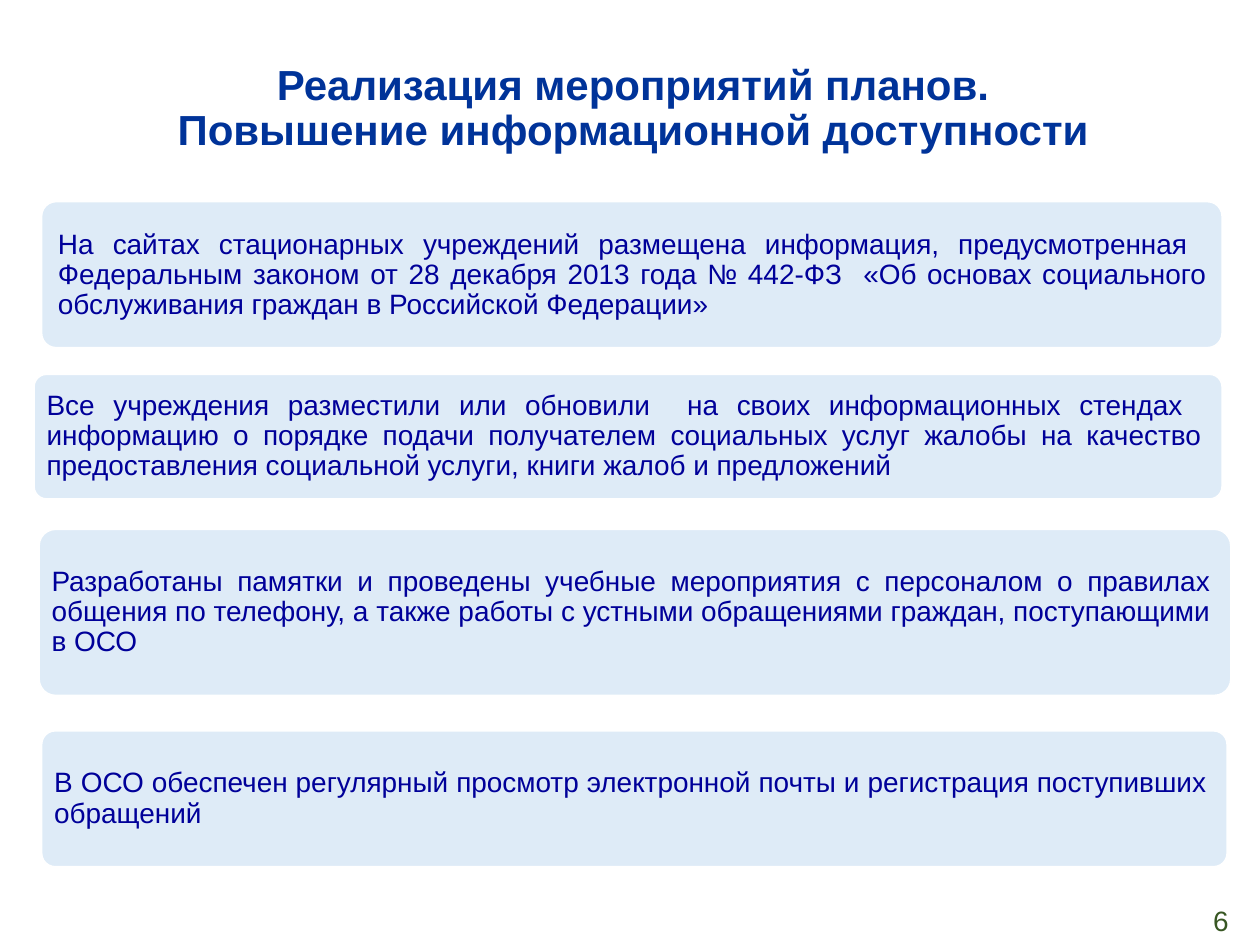
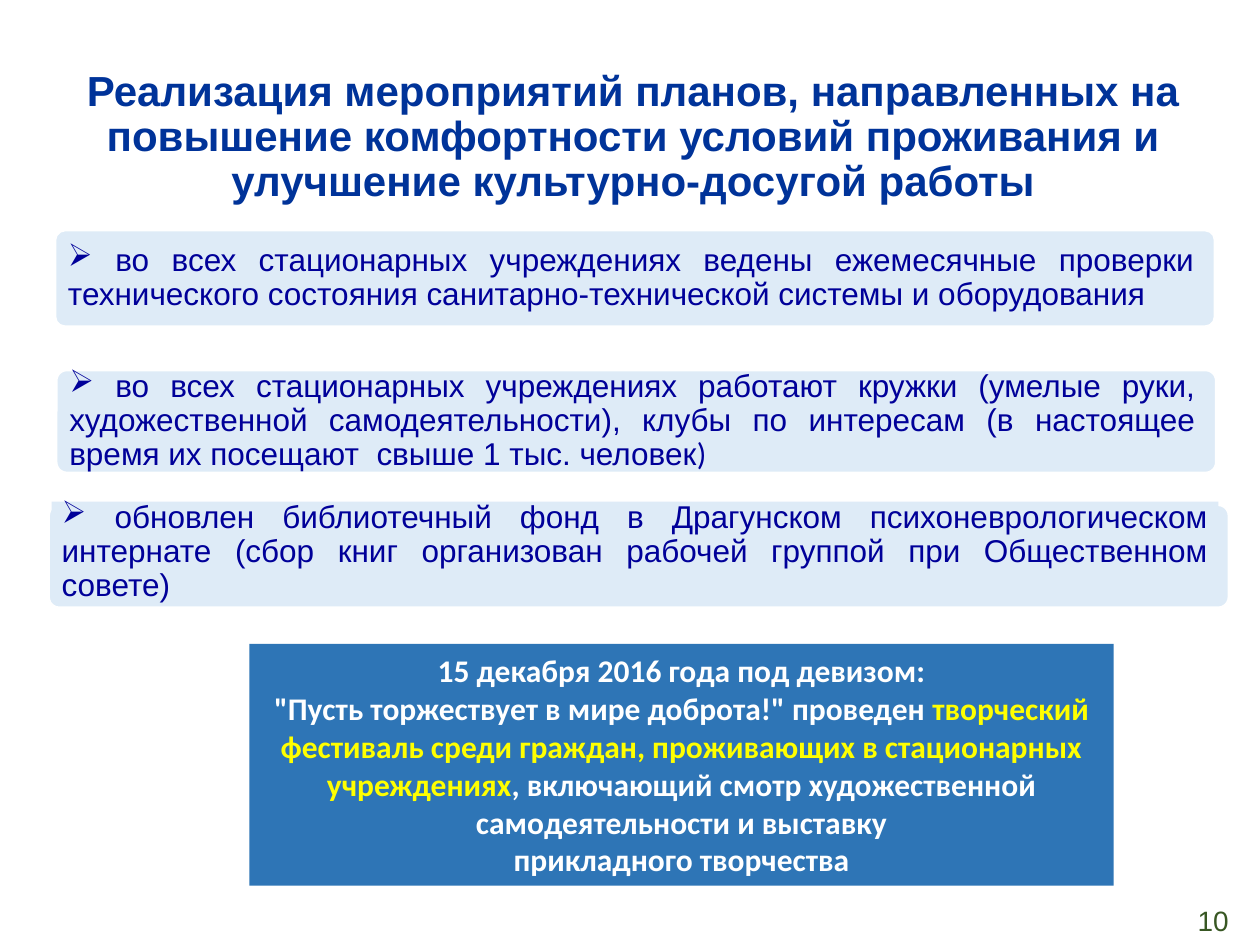
from lxml import etree
from pptx import Presentation, util as u
from pptx.dml.color import RGBColor
from pptx.enum import shapes, text
from pptx.oxml import ns

rgb = RGBColor.from_string
NAVY, INK, GREEN = "003399", "000099", "385723"
PALE, BLUE, YELLOW, WHITE = "DEEBF7", "2E75B6", "FFFF00", "FFFFFF"
ALIGN = text.PP_ALIGN
ROUND, RECT = shapes.MSO_SHAPE.ROUNDED_RECTANGLE, shapes.MSO_SHAPE.RECTANGLE

prs = Presentation()
prs.slide_width, prs.slide_height = u.Inches(10), u.Inches(7.5)


def at(left, top, width, height):
    """Turn percentages of the slide into left, top, width, height."""
    w, h = prs.slide_width / 100, prs.slide_height / 100
    return [round(v) for v in (left * w, top * h, width * w, height * h)]


def write(sp, paragraphs, size, color, font="Arial", bold=False,
          align=ALIGN.CENTER, spacing=1.0, inset=None, bullet=None):
    """Fill a shape with paragraphs, each a list of (text, overrides) runs."""
    tf = sp.text_frame
    tf.word_wrap, tf.auto_size = True, text.MSO_AUTO_SIZE.NONE
    tf.vertical_anchor = text.MSO_ANCHOR.MIDDLE
    if inset is not None:
        tf.margin_left = tf.margin_top = tf.margin_right = tf.margin_bottom = u.Inches(inset)
    for i, runs in enumerate(paragraphs):
        p = tf.add_paragraph() if i else tf.paragraphs[0]
        p.alignment, p.line_spacing = align, spacing
        p.space_before = p.space_after = u.Pt(0)
        if bullet:
            etree.SubElement(p._p.get_or_add_pPr(), ns.qn("a:buChar"), char=bullet)
        for words, own in runs:
            r = p.add_run()
            r.text = words
            r.font.size, r.font.bold = u.Pt(size), bold
            r.font.name = own.get("font", font)
            r.font.color.rgb = rgb(own.get("color", color))


# Each card: panel, label area if it is not the usual one, runs of text
slides = [
    dict(
        title=["Реализация мероприятий планов.", "Повышение информационной доступности"],
        title_height=13.6, number="6", size=16, bullet=None, banner=None,
        cards=[
            ((3.3, 21.33, 93.7, 15.47), (3.8, 22.93, 92.8, 12.4),
             [("На сайтах стационарных учреждений размещена информация, предусмотренная  "
               "Федеральным законом от 28 декабря 2013 года № 442-ФЗ  «Об основах социального "
               "обслуживания граждан в Российской Федерации»", {})]),
            ((2.7, 39.6, 94.3, 13.2), None,
             [("Все учреждения разместили или обновили  на своих информационных стендах  "
               "информацию о порядке подачи получателем социальных услуг жалобы на качество "
               "предоставления социальной услуги, книги жалоб и предложений", {})]),
            ((3.1, 56, 94.6, 17.6), None,
             [("Разработаны памятки и проведены учебные мероприятия с персоналом о правилах "
               "общения по телефону, а также работы с устными обращениями граждан, "
               "поступающими в ОСО", {})]),
            ((3.3, 77.33, 94.1, 14.4), None,
             [("В ОСО обеспечен регулярный просмотр электронной почты и регистрация "
               "поступивших обращений", {})]),
        ]),
    dict(
        title=["Реализация мероприятий планов, направленных на повышение комфортности "
               "условий проживания и улучшение культурно-досугой работы"],
        title_height=19.6, number="10", size=18, bullet="➢",
        cards=[
            ((4.4, 24.4, 92, 10.13), None,
             [(" во всех стационарных учреждениях ведены ежемесячные проверки технического "
               "состояния санитарно-технической системы и оборудования", {})]),
            ((4.5, 39.2, 92, 10.8), None,
             [(" во всех стационарных учреждениях работают кружки (умелые руки, "
               "художественной самодеятельности), клубы по интересам (в настоящее время "
               "их посещают  свыше 1 тыс. человек", {}), (")", dict(font="Calibri"))]),
            ((3.9, 53.47, 93.6, 10.8), (4.1, 53.07, 92.6, 10.67),
             [(" обновлен библиотечный фонд в Драгунском психоневрологическом интернате "
               "(сбор книг организован рабочей группой при Общественном совете)", {})]),
        ],
        banner=[
            [("15 декабря 2016 года под девизом:", {})],
            [("\"Пусть торжествует в мире доброта!\" проведен ", {}),
             ("творческий фестиваль среди граждан, проживающих в стационарных учреждениях",
              dict(color=YELLOW)),
             (", включающий смотр художественной самодеятельности и выставку", {})],
            [("прикладного творчества", {})],
        ]),
]

for page in slides:
    s = prs.slides.add_slide(prs.slide_layouts[5])

    # Title
    sp = s.shapes.title
    sp.left, sp.top, sp.width, sp.height = at(4.3, 4.8, 91.9, page["title_height"])
    write(sp, [[(line, {})] for line in page["title"]], 24, NAVY, bold=True, spacing=0.9)

    # Blocks: a rounded panel with a label for each card, then the banner
    card_format = dict(size=page["size"], color=INK, align=ALIGN.JUSTIFY, spacing=0.9,
                       inset=0.08, bullet=page["bullet"])
    blocks = []
    for panel, label, runs in page["cards"]:
        left, top, width, height = panel
        label = label or (left + 0.2, top + height / 10, width - 1, height * 0.8)
        blocks += [(ROUND, panel, PALE, None, {}),
                   (RECT, label, PALE, [runs], card_format)]
    if page["banner"]:
        blocks.append((RECT, (19.8, 68.13, 68.6, 25.6), BLUE, page["banner"],
                       dict(size=18, color=WHITE, font="Calibri", bold=True)))

    for kind, area, fill, paragraphs, style in blocks:
        sp = s.shapes.add_shape(kind, *at(*area))
        sp.shadow.inherit = False
        sp.fill.solid()
        sp.fill.fore_color.rgb = rgb(fill)
        if kind == ROUND:
            sp.adjustments[0] = 0.1
            sp.line.color.rgb, sp.line.width = rgb(WHITE), u.Pt(1)
        else:
            sp.line.fill.background()
        if paragraphs:
            write(sp, paragraphs, **style)

    # Page number
    sp = s.shapes.add_textbox(*at(76, 94.67, 22.5, 5.33))
    write(sp, [[(page["number"], {})]], 16, GREEN, align=ALIGN.RIGHT)

prs.save("out.pptx")
